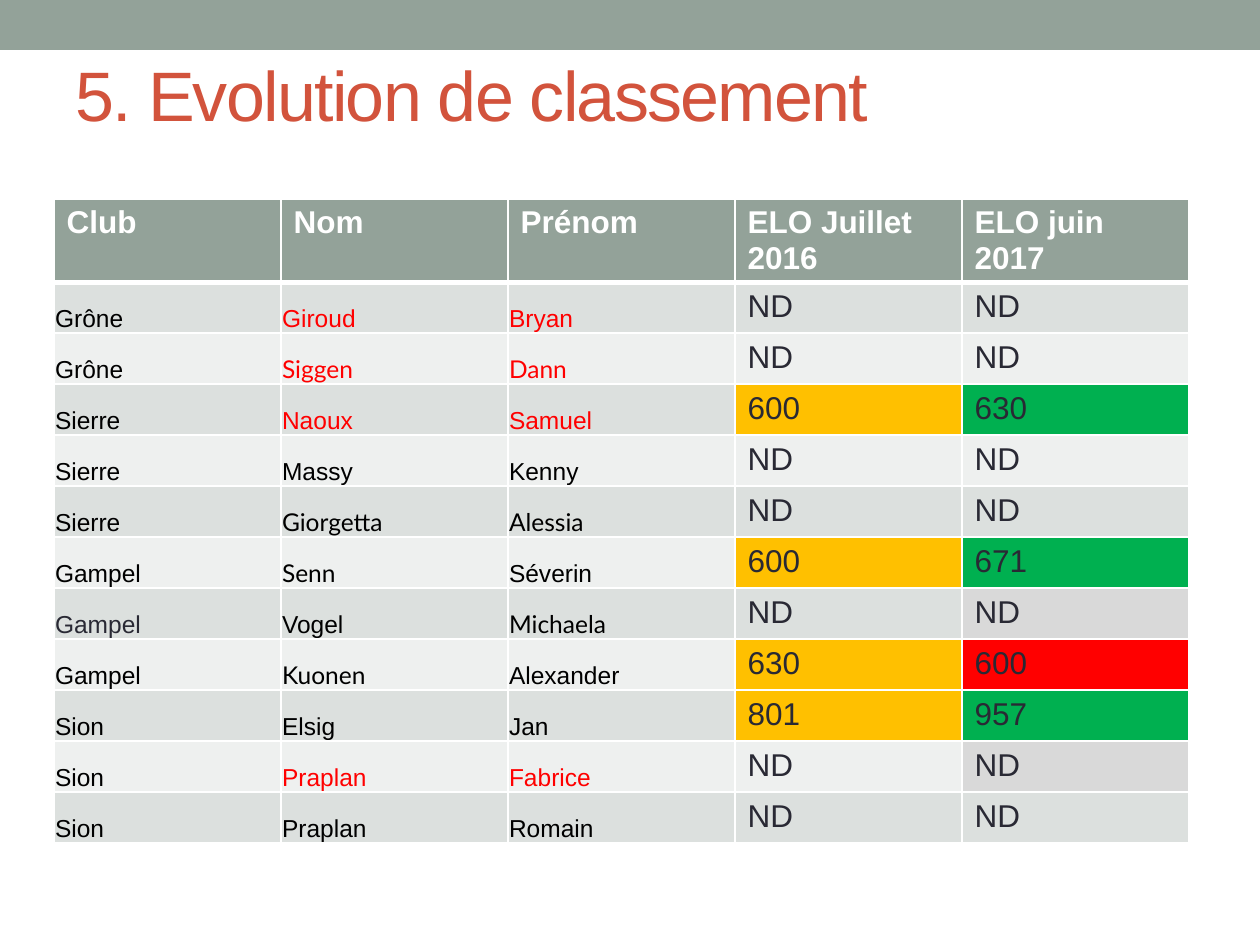
from dataclasses import dataclass

from lxml.etree import SubElement
from pptx import Presentation
from pptx.dml.color import RGBColor
from pptx.enum.shapes import MSO_SHAPE
from pptx.enum.text import MSO_ANCHOR, MSO_AUTO_SIZE, PP_ALIGN
from pptx.oxml.ns import qn
from pptx.util import Emu, Pt

SAGE = RGBColor(0x93, 0xA2, 0x99)
RUST = RGBColor(0xD2, 0x53, 0x3C)
INK = RGBColor(0x29, 0x29, 0x34)
BLACK = RGBColor(0, 0, 0)
WHITE = RGBColor(0xFF, 0xFF, 0xFF)
RED = RGBColor(0xFF, 0, 0)
AMBER = RGBColor(0xFF, 0xC0, 0)
GREEN = RGBColor(0, 0xB0, 0x50)
GRAY = RGBColor(0xD9, 0xD9, 0xD9)
BANDS = (RGBColor(0xDC, 0xE0, 0xDE), RGBColor(0xEE, 0xF0, 0xEF))

SCALE = 914400 / 126  # EMU per px
HEADS = ("Club", "Nom", "Prénom", "ELO Juillet 2016", "ELO juin 2017")
COL, HEAD, ROW = 227, 83, 51
LATO = {"Siggen", "Dann", "Giorgetta", "Alessia", "Senn", "Michaela", "Kuonen"}


@dataclass
class Player:
    club: str
    last: str
    first: str
    old: str = "ND"
    new: str = "ND"
    tint: RGBColor = BLACK
    club_tint: RGBColor = BLACK
    gray: bool = False

    def fills(self, band: RGBColor) -> list:
        """Cell fills: a rise in rank is green, a fall is red."""
        if self.old == "ND":
            pair = [band, GRAY if self.gray else band]
        else:
            pair = [AMBER, GREEN if int(self.new) > int(self.old) else RED]
        return [band] * 3 + pair


PLAYERS = [
    Player("Grône", "Giroud", "Bryan", tint=RED),
    Player("Grône", "Siggen", "Dann", tint=RED),
    Player("Sierre", "Naoux", "Samuel", "600", "630", tint=RED),
    Player("Sierre", "Massy", "Kenny"),
    Player("Sierre", "Giorgetta", "Alessia"),
    Player("Gampel", "Senn", "Séverin", "600", "671"),
    Player("Gampel", "Vogel", "Michaela", club_tint=INK, gray=True),
    Player("Gampel", "Kuonen", "Alexander", "630", "600"),
    Player("Sion", "Elsig", "Jan", "801", "957"),
    Player("Sion", "Praplan", "Fabrice", tint=RED, gray=True),
    Player("Sion", "Praplan", "Romain"),
]


def px(n: int) -> Emu:
    return Emu(round(n * SCALE))


def style(font, tint: RGBColor, **form) -> None:
    for key, value in form.items():
        setattr(font, key, value)
    font.color.rgb = tint


def edge(cell, top: int, low: int) -> None:
    """Draw white cell borders, with widths in points."""
    props = cell._tc.get_or_add_tcPr()
    sides = {"lnL": 1, "lnR": 1, "lnT": top, "lnB": low}
    for spot, (tag, width) in enumerate(sides.items()):
        line = SubElement(props, qn(f"a:{tag}"), w=str(Pt(width)))
        fill = SubElement(line, qn("a:solidFill"))
        SubElement(fill, qn("a:srgbClr"), val=str(WHITE))
        props.insert(spot, line)


def fill_cell(cell, text: str, back: RGBColor, tint: RGBColor,
              top: int = 1, low: int = 1, **form) -> None:
    cell.text = text
    cell.fill.solid()
    cell.fill.fore_color.rgb = back
    edge(cell, top, low)
    style(cell.text_frame.paragraphs[0].runs[0].font, tint, **form)


def add_title(slide, text: str) -> None:
    title = slide.shapes.title
    place = {"left": 63, "top": 26, "width": 1134, "height": 136}
    for key, value in place.items():
        setattr(title, key, px(value))
    frame = title.text_frame
    frame.text = text
    frame.auto_size = MSO_AUTO_SIZE.NONE
    frame.vertical_anchor = MSO_ANCHOR.MIDDLE
    para = frame.paragraphs[0]
    para.alignment = PP_ALIGN.LEFT
    run = para.runs[0]
    style(run.font, RUST, name="Arial", size=Pt(40))
    run.font._element.set("spc", "-100")


def add_ranks(slide) -> None:
    count = len(PLAYERS)
    frame = slide.shapes.add_table(count + 1, len(HEADS), px(54), px(199),
                                   px(COL * len(HEADS)), px(HEAD + ROW * count))
    table = frame.table
    table.horz_banding = False
    for col in table.columns:
        col.width = px(COL)
    for i, row in enumerate(table.rows):
        row.height = px(ROW if i else HEAD)

    # Header row
    for j, head in enumerate(HEADS):
        fill_cell(table.cell(0, j), head, SAGE, WHITE, low=3,
                  name="Arial", size=Pt(18), bold=True)

    # Player rows: small names at the bottom, large ranks at the top
    inset = {"margin_left": px(1), "margin_right": px(1),
             "margin_top": px(1), "margin_bottom": 0,
             "vertical_anchor": MSO_ANCHOR.BOTTOM}
    for i, who in enumerate(PLAYERS, 1):
        texts = (who.club, who.last, who.first, who.old, who.new)
        tints = (who.club_tint, who.tint, who.tint, INK, INK)
        backs = who.fills(BANDS[(i - 1) % 2])
        for j, (text, back, tint) in enumerate(zip(texts, backs, tints)):
            cell = table.cell(i, j)
            fill_cell(cell, text, back, tint, top=3 if i == 1 else 1,
                      name="Lato" if text in LATO else "Arial",
                      size=Pt(14 if j < 3 else 18), bold=False)
            if j < 3:
                for key, value in inset.items():
                    setattr(cell, key, value)


def main() -> None:
    deck = Presentation()
    deck.slide_width, deck.slide_height = px(1260), px(945)
    slide = deck.slides.add_slide(deck.slide_layouts[5])

    # Top band
    band = slide.shapes.add_shape(MSO_SHAPE.RECTANGLE, 0, 0, px(1260), px(50))
    band.shadow.inherit = False
    band.fill.solid()
    band.fill.fore_color.rgb = SAGE
    band.line.fill.background()

    add_title(slide, "5. Evolution de classement")
    add_ranks(slide)
    deck.save("out.pptx")


if __name__ == "__main__":
    main()
